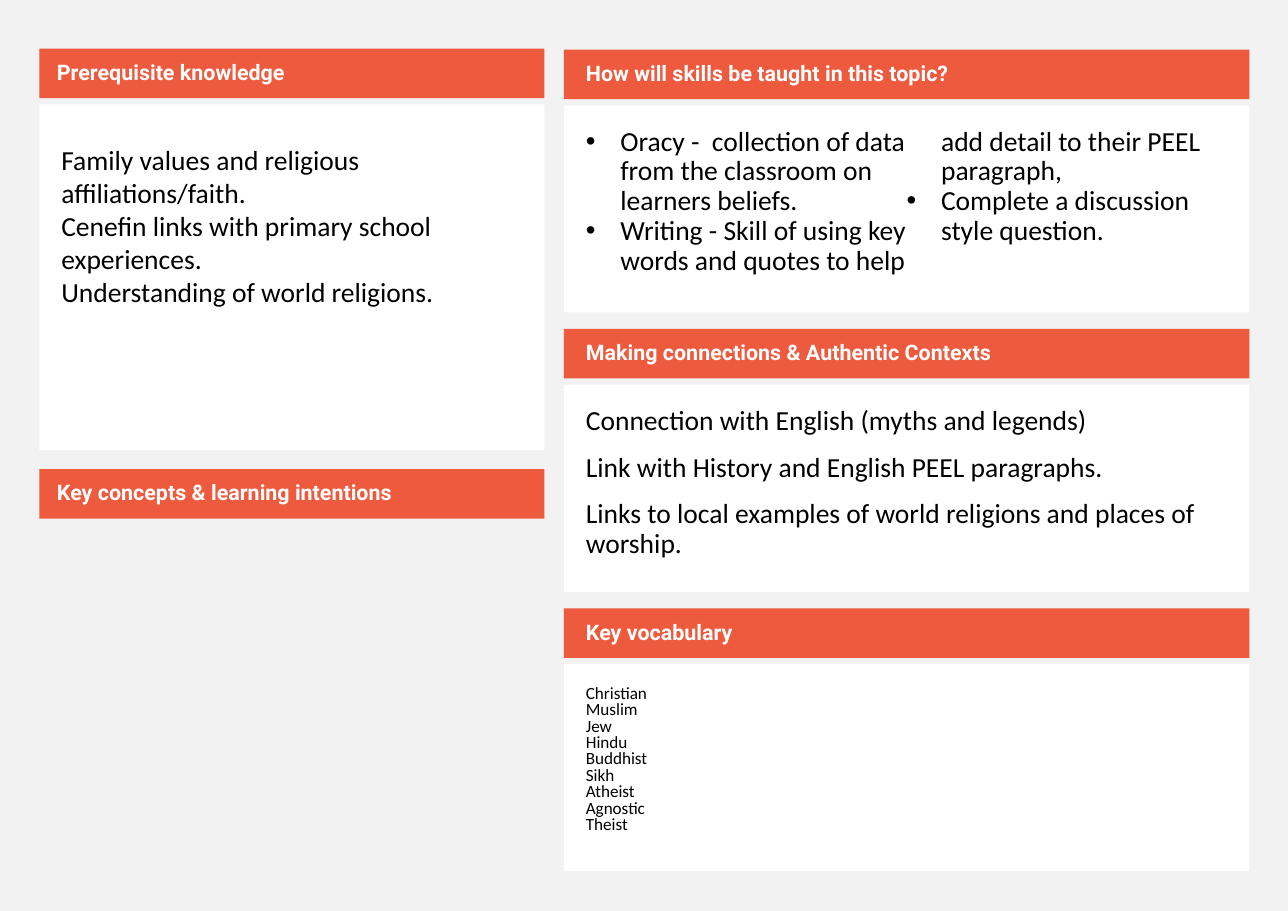
from pptx import Presentation
from pptx.dml.color import RGBColor
from pptx.enum import shapes, text
from pptx.util import Pt
from lxml import etree

# Content: heading, body paragraphs, body style
LEFT = [
    ("Prerequisite knowledge",
     ["Family values and religious affiliations/faith.",
      "Cenefin links with primary school experiences.",
      "Understanding of world religions."],
     dict(size=18, spacing=1, top=25)),
    ("Key concepts & learning intentions", [], {}),
]
RIGHT = [
    ("How will skills be taught in this topic?",
     ["Oracy -  collection of data from the classroom on learners beliefs.",
      "Writing - Skill of using key words and quotes to help add detail to their PEEL paragraph,",
      "Complete a discussion style question."],
     dict(size=18, spacing=0.9, bullets=True, columns=2)),
    ("Making connections & Authentic Contexts",
     ["Connection with English (myths and legends)",
      "Link with History and English PEEL paragraphs.",
      "Links to local examples of world religions and places of worship."],
     dict(size=18, spacing=0.9, before=11)),
    ("Key vocabulary",
     ["Christian", "Muslim", "Jew", "Hindu", "Buddhist", "Sikh",
      "Atheist", "Agnostic", "Theist"],
     dict(size=11.2, spacing=0.8)),
]

# Layout in points: left, top, width, body height, gap between panels, heading inset
COLUMNS = [
    (LEFT, 25.7, 31.8, 330, 226, 12.4, 11.5),
    (RIGHT, 368.5, 32.4, 448, 135.4, 10.8, 14.4),
]
HEADING_H, HEADING_GAP, INSET, INDENT = 32.4, 4, 14.4, 22.5
ORANGE, WHITE, BLACK, GREY = "ED5A3E", "FFFFFF", "000000", "F2F2F2"


def paint(fill, color):
    fill.solid()
    fill.fore_color.rgb = RGBColor.from_string(color)


def add_panel(s, box, color, insets, anchor):
    sp = s.shapes.add_shape(shapes.MSO_SHAPE.RECTANGLE, *map(Pt, box))
    sp.shadow.inherit = False
    paint(sp.fill, color)
    sp.line.fill.background()
    tf = sp.text_frame
    tf.word_wrap = True
    tf.vertical_anchor = anchor
    tf.margin_left, tf.margin_top, tf.margin_right, tf.margin_bottom = map(Pt, insets)
    return tf


def write(tf, lines, font, size, color, spacing, before=0, bold=False):
    for i, line in enumerate(lines):
        p = tf.add_paragraph() if i else tf.paragraphs[0]
        p.text = line
        p.alignment = text.PP_ALIGN.LEFT
        p.line_spacing = spacing
        p.space_before = Pt(before)
        p.font.name, p.font.size, p.font.bold = font, Pt(size), bold
        paint(p.font.fill, color)


def add_bullets(tf):
    for p in tf.paragraphs:
        pPr = p._p.get_or_add_pPr()
        pPr.set("marL", str(Pt(INDENT)))
        pPr.set("indent", str(-Pt(INDENT)))
        ns = pPr.nsmap["a"]
        bullet = etree.Element(f"{{{ns}}}buChar", char="•")
        font = etree.Element(f"{{{ns}}}buFont", typeface="Arial")
        defaults = pPr.find(f"{{{ns}}}defRPr")
        defaults.addprevious(font)
        defaults.addprevious(bullet)


def add_heading(s, box, title, inset):
    tf = add_panel(s, box, ORANGE, (inset, 3.6, 7.2, 3.6), text.MSO_ANCHOR.MIDDLE)
    write(tf, [title], "Roboto", 14, WHITE, 0.9, bold=True)


def add_body(s, box, lines, size, spacing, before=0, top=INSET, bullets=False, columns=1):
    tf = add_panel(s, box, WHITE, (INSET, top, INSET, INSET), text.MSO_ANCHOR.TOP)
    write(tf, lines, "Calibri", size, BLACK, spacing, before)
    if bullets:
        add_bullets(tf)
    if columns > 1:
        tf._txBody.bodyPr.set("numCol", str(columns))


def main():
    prs = Presentation()
    prs.slide_width, prs.slide_height = Pt(841.68), Pt(595.44)
    s = prs.slides.add_slide(prs.slide_layouts[6])
    paint(s.background.fill, GREY)

    # Stack each column: heading, then its body when it has one
    for panels, x, y, w, body_h, gap, inset in COLUMNS:
        for title, lines, style in panels:
            add_heading(s, (x, y, w, HEADING_H), title, inset)
            y += HEADING_H + HEADING_GAP
            if lines:
                add_body(s, (x, y, w, body_h), lines, **style)
            y += body_h + gap

    prs.save("out.pptx")


if __name__ == "__main__":
    main()
